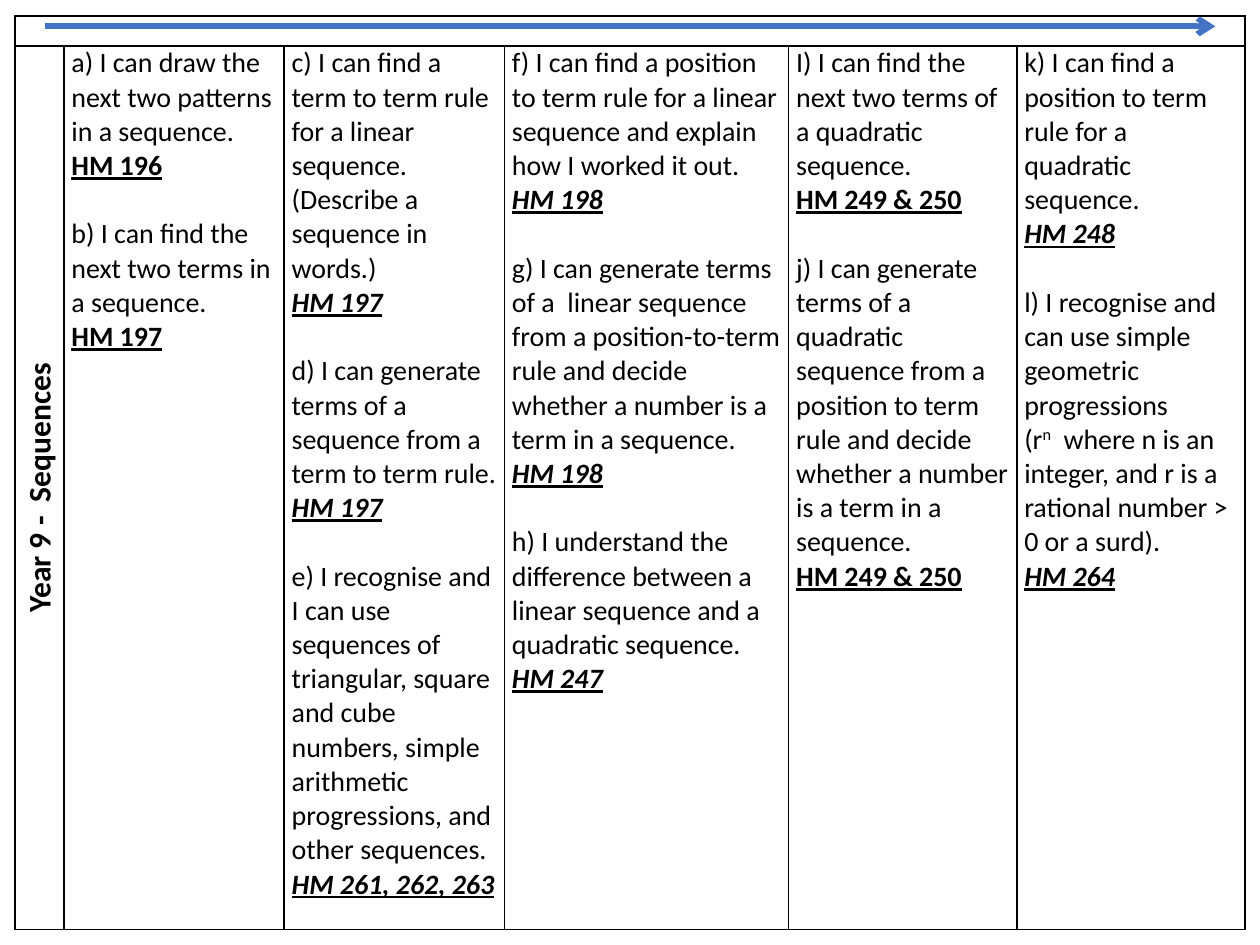
from lxml import etree
from pptx import Presentation
from pptx.dml.color import RGBColor
from pptx.enum.shapes import MSO_CONNECTOR
from pptx.enum.text import MSO_ANCHOR, PP_ALIGN
from pptx.oxml.ns import qn
from pptx.util import Cm, Pt

BLACK = RGBColor(0x00, 0x00, 0x00)
BLUE = RGBColor(0x44, 0x72, 0xC4)
STRAIGHT = MSO_CONNECTOR.STRAIGHT
BOTTOM = MSO_ANCHOR.BOTTOM
CENTER = PP_ALIGN.CENTER

COLUMN_WIDTHS = [0.99, 4.44, 4.44, 5.73, 4.6, 4.6]
ROW_HEIGHTS = [0.61, 17.81]

# Each goal: text, reference, reference in italics; ^ marks a superscript
GOALS = [
    [("a) I can draw the next two patterns in a sequence.", "HM 196", False),
     ("b) I can find the next two terms in a sequence.", "HM 197", False)],
    [("c) I can find a term to term rule for a linear sequence. "
      "(Describe a sequence in words.)", "HM 197", True),
     ("d) I can generate terms of a sequence from a term to term rule.", "HM 197", True),
     ("e) I recognise and I can use sequences of triangular, square and cube numbers, "
      "simple arithmetic progressions, and other sequences.", "HM 261, 262, 263", True)],
    [("f) I can find a position to term rule for a linear sequence and explain "
      "how I worked it out.", "HM 198", True),
     ("g) I can generate terms of a  linear sequence from a position-to-term rule "
      "and decide whether a number is a term in a sequence.", "HM 198", True),
     ("h) I understand the difference between a linear sequence and a quadratic sequence.",
      "HM 247", True)],
    [("I) I can find the next two terms of a quadratic sequence.", "HM 249 & 250", False),
     ("j) I can generate terms of a quadratic sequence from a position to term rule "
      "and decide whether a number is a term in a sequence.", "HM 249 & 250", False)],
    [("k) I can find a position to term rule for a quadratic sequence.", "HM 248", True),
     ("l) I recognise and can use simple geometric progressions\n"
      "(r^n^  where n is an integer, and r is a rational number > 0 or a surd).",
      "HM 264", True)],
]


def write(para, text, size=16, bold=False, italic=False, underline=False):
    for index, part in enumerate(text.split("^")):
        span = para.add_run()
        span.text = part
        span.font.name = "Calibri"
        span.font.size = Pt(size)
        span.font.bold = bold
        span.font.italic = italic
        span.font.underline = underline
        span.font.color.rgb = BLACK
        if index % 2:
            span.font._element.set("baseline", "30000")


def format_cell(cell, side_margin):
    cell.margin_left = cell.margin_right = Cm(side_margin)
    cell.margin_top = cell.margin_bottom = 0
    properties = cell._tc.get_or_add_tcPr()
    for side in ("a:lnL", "a:lnR", "a:lnT", "a:lnB"):
        line = etree.SubElement(properties, qn(side), w=str(Pt(1)))
        fill = etree.SubElement(line, qn("a:solidFill"))
        etree.SubElement(fill, qn("a:srgbClr"), val=str(BLACK))
    cell.fill.background()


deck = Presentation()
deck.slide_width = Cm(25.4)
deck.slide_height = Cm(19.05)
page = deck.slides.add_slide(deck.slide_layouts[6])

# Table grid
frame = page.shapes.add_table(2, len(COLUMN_WIDTHS), Cm(0.3), Cm(0.32),
                              Cm(sum(COLUMN_WIDTHS)), Cm(sum(ROW_HEIGHTS)))
table = frame.table
table.first_row = False
table.horz_banding = False
for column, width in zip(table.columns, COLUMN_WIDTHS):
    column.width = Cm(width)
for row, height in zip(table.rows, ROW_HEIGHTS):
    row.height = Cm(height)
for cell in table.iter_cells():
    format_cell(cell, 0.15)

# Empty top row, with small type so that it stays low
for cell in table.rows[0].cells:
    etree.SubElement(cell.text_frame.paragraphs[0]._p, qn("a:endParaRPr"), sz="800")
table.cell(0, 0).merge(table.cell(0, len(COLUMN_WIDTHS) - 1))

# Upright unit title
title = table.cell(1, 0)
title.margin_left = title.margin_right = Cm(0.18)
title.vertical_anchor = BOTTOM
title._tc.get_or_add_tcPr().set("vert", "vert270")
para = title.text_frame.paragraphs[0]
para.alignment = CENTER
para.line_spacing = 1.15
write(para, "Year 9 - \u00a0Sequences", size=18, bold=True)

# Learning goals, one column per stage
for column, goals in enumerate(GOALS, start=1):
    text_frame = table.cell(1, column).text_frame
    para = text_frame.paragraphs[0]
    for number, (goal, reference, italic) in enumerate(goals):
        if number:
            para = text_frame.add_paragraph()
            para.space_before = Pt(19.5)
        first, *others = goal.split("\n")
        write(para, first)
        for other in others:
            write(text_frame.add_paragraph(), other)
        write(text_frame.add_paragraph(), reference, bold=True, italic=italic, underline=True)

# Progress arrow
arrow = page.shapes.add_connector(STRAIGHT, Cm(0.9), Cm(0.53), Cm(24.5), Cm(0.53))
arrow.line.color.rgb = BLUE
arrow.line.width = Pt(3.25)
etree.SubElement(arrow.line._get_or_add_ln(), qn("a:tailEnd"), type="arrow")
etree.SubElement(arrow._element.spPr, qn("a:effectLst"))

deck.save("out.pptx")
